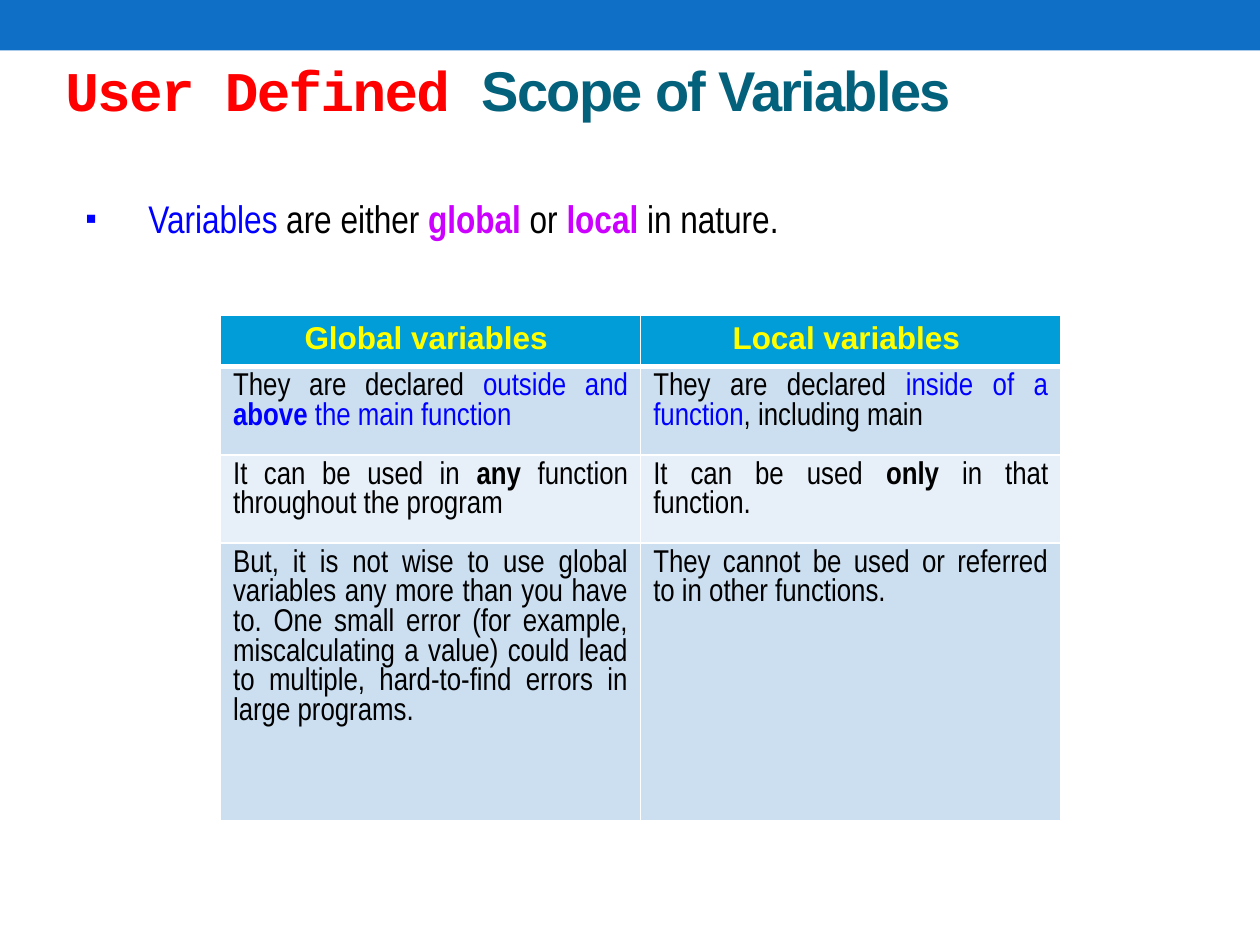
from dataclasses import dataclass

import pptx
import pptx.dml.color
import pptx.enum.shapes
import pptx.enum.text
import pptx.oxml.ns
import pptx.util
from lxml import etree
from pptx.util import Inches

ALIGN = pptx.enum.text.PP_ALIGN


@dataclass(frozen=True)
class Theme:
    banner: str = "0F6FC6"
    title: str = "04617B"
    title_accent: str = "FF0000"
    black: str = "000000"
    blue: str = "0000FF"
    magenta: str = "CC00FF"
    header_text: str = "FFFF00"
    header_fill: str = "009DD9"
    bands: tuple = ("CCDFF1", "E7EFF8")
    border: str = "FFFFFF"
    heading_font: str = "Arial"
    code_font: str = "Courier New"
    body_font: str = "Arial Narrow"
    title_size: int = 32
    body_size: int = 22
    table_size: int = 18


THEME = Theme()

HEADERS = ["Global variables ", "Local variables "]
COMPARISON = [
    [
        [("They are declared ",), ("outside and ", THEME.blue),
         ("above", THEME.blue, True), (" the main function", THEME.blue)],
        [("They are declared ",), ("inside of a function", THEME.blue),
         (", including main",)],
    ],
    [
        [("It can be used in ",), ("any", THEME.black, True),
         (" function throughout the program",)],
        [("It can be used ",), ("only ", THEME.black, True),
         ("in that function.",)],
    ],
    [
        [("But, it is not wise to use global variables any more than you have "
          "to. One small error (for example, miscalculating a value) could lead "
          "to multiple, hard-to-find errors in large programs. ",)],
        [("They cannot be used or referred to in other functions. ",)],
    ],
]


def rgb(color):
    return pptx.dml.color.RGBColor.from_string(color)


def add_child(parent, tag, **attributes):
    child = etree.SubElement(parent, pptx.oxml.ns.qn(tag))
    for name, value in attributes.items():
        child.set(name, str(value))
    return child


def write_runs(paragraph, runs, size, font, align):
    paragraph.alignment = align
    paragraph.font.size = pptx.util.Pt(size)
    paragraph.font.name = font
    for text, color, bold in ((*run, THEME.black, False)[:3] if len(run) == 1
                              else (*run, False)[:3] for run in runs):
        run = paragraph.add_run()
        run.text = text
        run.font.color.rgb = rgb(color)
        run.font.bold = bold


def add_textbox(slide, left, top, width, height, anchor):
    frame = slide.shapes.add_textbox(
        Inches(left), Inches(top), Inches(width), Inches(height)).text_frame
    frame.word_wrap = True
    frame.vertical_anchor = anchor
    return frame.paragraphs[0]


def add_banner(slide):
    banner = slide.shapes.add_shape(
        pptx.enum.shapes.MSO_SHAPE.RECTANGLE, 0, 0, Inches(10), Inches(0.4))
    banner.shadow.inherit = False
    banner.fill.solid()
    banner.fill.fore_color.rgb = rgb(THEME.banner)
    banner.line.fill.background()


def add_title(slide):
    title = add_textbox(slide, 0.42, 0.42, 9.5, 0.58,
                        pptx.enum.text.MSO_ANCHOR.MIDDLE)
    write_runs(title, [("User Defined ", THEME.title_accent, True),
                       ("Scope of Variables", THEME.title, True)],
               THEME.title_size, THEME.heading_font, ALIGN.LEFT)
    title.runs[0].font.name = THEME.code_font
    for run in title.runs:
        run.font._element.set("spc", "-100")


def add_bullet(slide):
    statement = add_textbox(slide, 0.58, 1.5, 9, 5.58,
                            pptx.enum.text.MSO_ANCHOR.TOP)
    statement.space_before = pptx.util.Pt(0.2 * THEME.body_size)
    write_runs(statement, [("Variables", THEME.blue), (" are either ",),
                           ("global", THEME.magenta, True), (" or ",),
                           ("local", THEME.magenta, True), (" in nature. ",)],
               THEME.body_size, THEME.body_font, ALIGN.JUSTIFY)
    properties = statement._p.get_or_add_pPr()
    properties.set("marL", str(Inches(0.5)))
    properties.set("indent", str(Inches(-0.5)))
    defaults = properties.find(pptx.oxml.ns.qn("a:defRPr"))
    bullet_color = add_child(properties, "a:buClr")
    add_child(bullet_color, "a:srgbClr", val=THEME.blue)
    add_child(properties, "a:buSzPct", val=85000)
    add_child(properties, "a:buFont", typeface=THEME.heading_font)
    add_child(properties, "a:buChar", char="▪")
    properties.append(defaults)


def style_cell(cell, fill, bottom_width):
    properties = cell._tc.get_or_add_tcPr()
    for side, width in (("L", 1), ("R", 1), ("T", 1), ("B", bottom_width)):
        line = add_child(properties, f"a:ln{side}", w=pptx.util.Pt(width))
        add_child(add_child(line, "a:solidFill"), "a:srgbClr", val=THEME.border)
    cell.fill.solid()
    cell.fill.fore_color.rgb = rgb(fill)


def add_comparison(slide):
    heights = [0.41, 0.7, 0.7, 2.2]
    table = slide.shapes.add_table(
        len(heights), len(HEADERS), Inches(1.75), Inches(2.5),
        Inches(6.67), Inches(sum(heights))).table
    for row, height in zip(table.rows, heights):
        row.height = Inches(height)
    for column, heading in enumerate(HEADERS):
        cell = table.cell(0, column)
        write_runs(cell.text_frame.paragraphs[0],
                   [(heading, THEME.header_text, True)],
                   THEME.table_size, THEME.heading_font, ALIGN.CENTER)
        style_cell(cell, THEME.header_fill, 3)
    for row, facts in enumerate(COMPARISON, start=1):
        for column, runs in enumerate(facts):
            cell = table.cell(row, column)
            write_runs(cell.text_frame.paragraphs[0], runs,
                       THEME.table_size, THEME.body_font, ALIGN.JUSTIFY)
            style_cell(cell, THEME.bands[(row - 1) % 2], 1)


def main():
    presentation = pptx.Presentation()
    presentation.slide_width = Inches(10)
    presentation.slide_height = Inches(7.5)
    slide = presentation.slides.add_slide(presentation.slide_layouts[6])
    add_banner(slide)
    add_title(slide)
    add_bullet(slide)
    add_comparison(slide)
    presentation.save("out.pptx")


if __name__ == "__main__":
    main()
